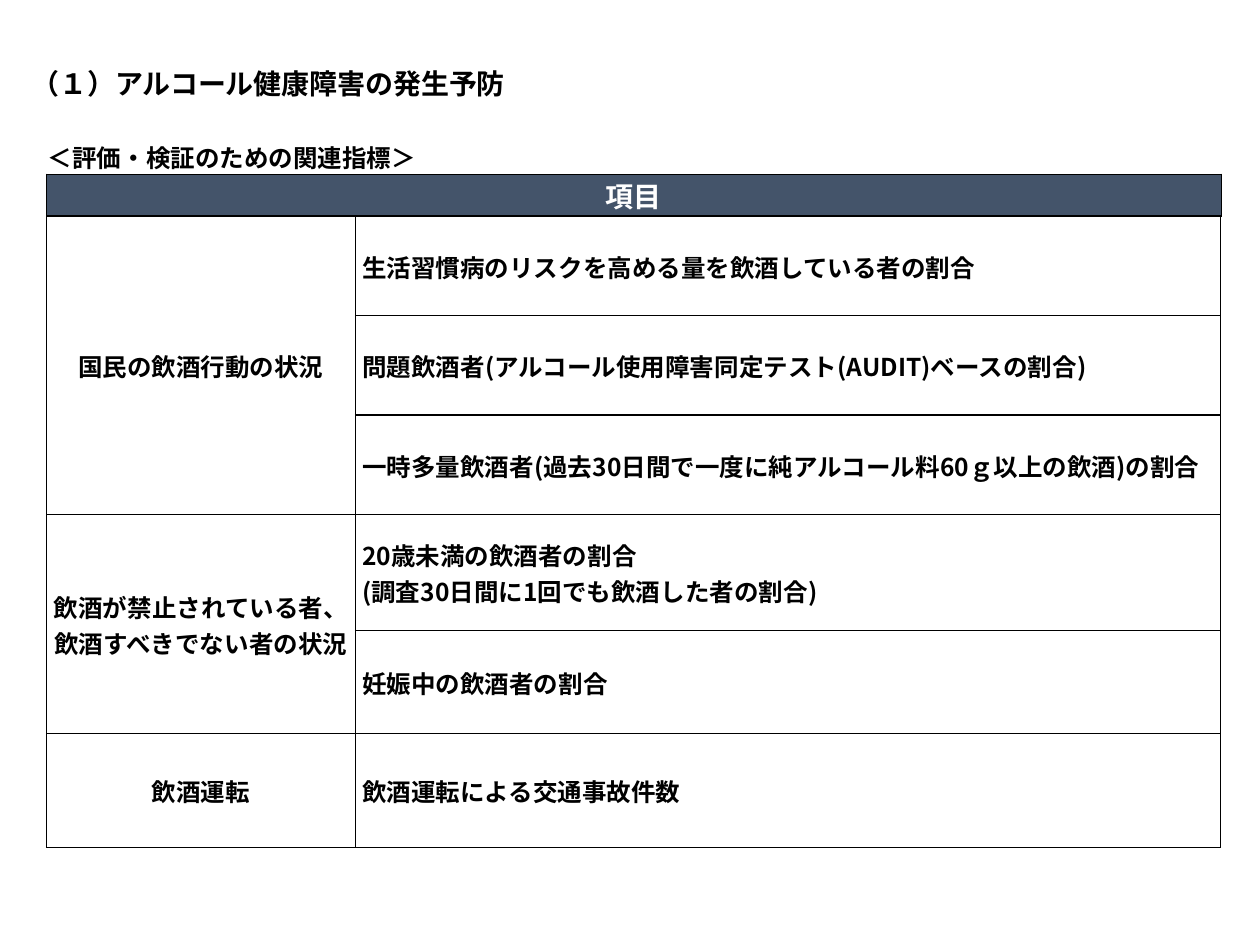
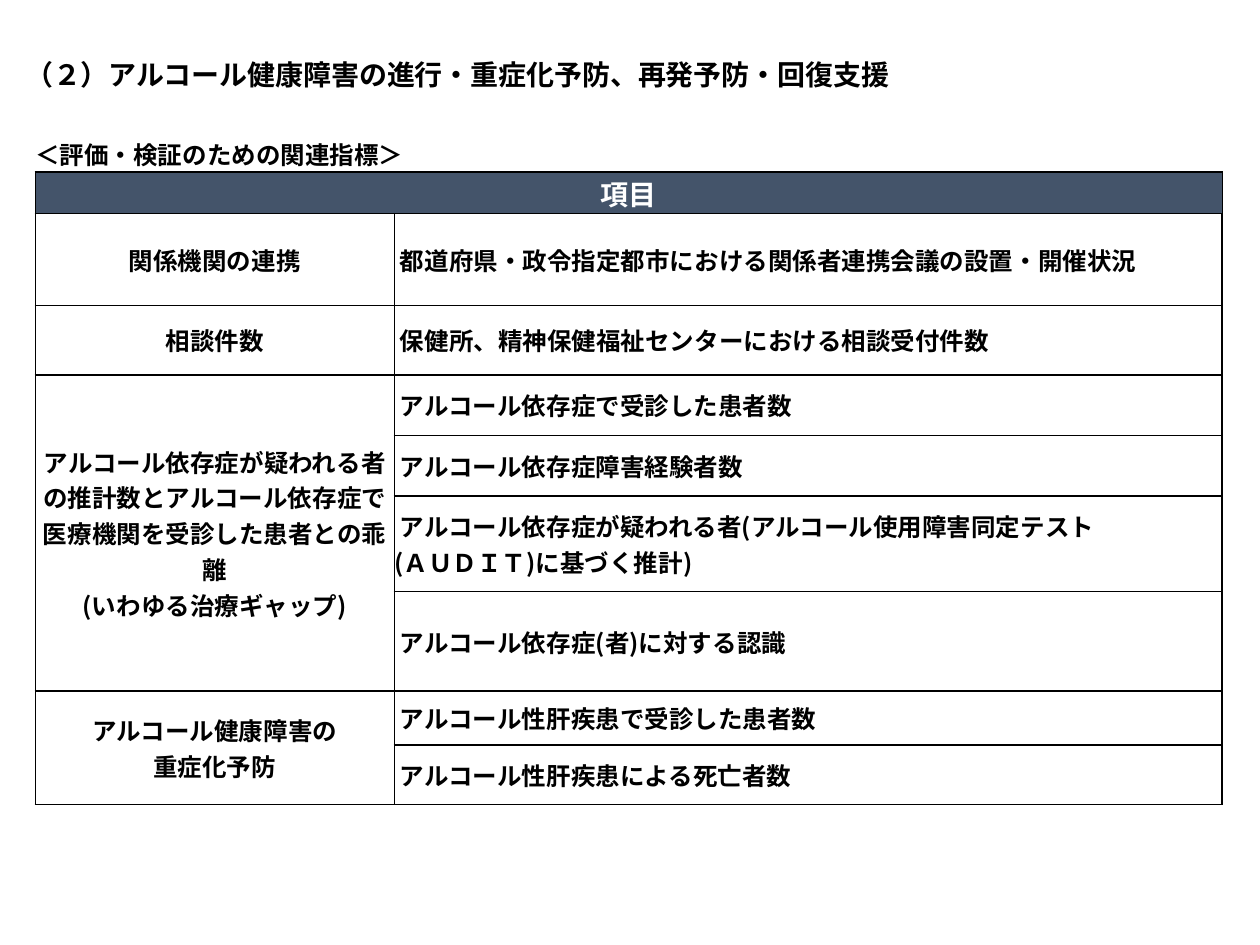
import lxml.etree
import pptx
import pptx.dml.color
import pptx.enum.lang
import pptx.enum.text
import pptx.oxml.ns
import pptx.util
from pptx.util import Inches

FONT = "Noto Sans CJK JP"
BLACK, WHITE, NAVY = "000000", "FFFFFF", "44546A"
LEFT, CENTER = pptx.enum.text.PP_ALIGN.LEFT, pptx.enum.text.PP_ALIGN.CENTER
TOP = pptx.enum.text.MSO_ANCHOR.TOP
MIDDLE = pptx.enum.text.MSO_ANCHOR.MIDDLE
BOTTOM = pptx.enum.text.MSO_ANCHOR.BOTTOM
SIDES = ("L", "R", "T", "B")
CAPTION = "＜評価・検証のための関連指標＞"
HEADER = "項目"
HEAD_HEIGHTS = [0.29, 0.33]

PREVENTION_ROWS = [
    (0.79, 3, ["国民の飲酒行動の状況"], [" 生活習慣病のリスクを高める量を飲酒している者の割合"]),
    (0.79, 0, None, [" 問題飲酒者(アルコール使用障害同定テスト(AUDIT)ベースの割合)"]),
    (0.79, 0, None, [" 一時多量飲酒者(過去30日間で一度に純アルコール料60ｇ以上の飲酒)の割合"]),
    (0.92, 2, ["飲酒が禁止されている者、", "飲酒すべきでない者の状況"],
     [" 20歳未満の飲酒者の割合", " (調査30日間に1回でも飲酒した者の割合)"]),
    (0.82, 0, None, [" 妊娠中の飲酒者の割合"]),
    (0.9, 1, ["飲酒運転"], [" 飲酒運転による交通事故件数"]),
]

RECOVERY_ROWS = [
    (0.73, 1, ["関係機関の連携"], [" 都道府県・政令指定都市における関係者連携会議の設置・開催状況"]),
    (0.55, 1, ["相談件数"], [" 保健所、精神保健福祉センターにおける相談受付件数"]),
    (0.48, 4, ["アルコール依存症が疑われる者の推計数とアルコール依存症で医療機関を受診した患者との乖離",
               "(いわゆる治療ギャップ)"], [" アルコール依存症で受診した患者数"]),
    (0.48, 0, None, [" アルコール依存症障害経験者数"]),
    (0.76, 0, None, [" アルコール依存症が疑われる者(アルコール使用障害同定テスト", "(ＡＵＤＩＴ)に基づく推計)"]),
    (0.79, 0, None, [" アルコール依存症(者)に対する認識"]),
    (0.43, 2, ["アルコール健康障害の", "重症化予防"], [" アルコール性肝疾患で受診した患者数"]),
    (0.47, 0, None, [" アルコール性肝疾患による死亡者数"]),
]


def color(hex_value):
    return pptx.dml.color.RGBColor.from_string(hex_value)


def set_attributes(target, values):
    for name, value in values.items():
        setattr(target, name, value)


class IndicatorDeck:
    """Hold the shared style and the current slide of the indicator tables."""

    def __init__(self):
        self.presentation = pptx.Presentation()
        set_attributes(self.presentation, {"slide_width": Inches(10), "slide_height": Inches(7.5)})
        self.slide = None

    def add_slide(self):
        self.slide = self.presentation.slides.add_slide(self.presentation.slide_layouts[5])

    def put_text(self, text_frame, lines, size, font_color=BLACK, alignment=LEFT):
        text_frame.text = "\n".join(lines)
        for paragraph in text_frame.paragraphs:
            paragraph.alignment = alignment
            font = paragraph.runs[0].font
            set_attributes(font, {
                "name": FONT, "size": pptx.util.Pt(size), "bold": True,
                "language_id": pptx.enum.lang.MSO_LANGUAGE_ID.JAPANESE,
            })
            font.color.rgb = color(font_color)
            east_asian = lxml.etree.SubElement(font._element, pptx.oxml.ns.qn("a:ea"))
            east_asian.set("typeface", FONT)

    def title(self, text, left, top, width):
        shape = self.slide.shapes.title
        set_attributes(shape, {
            "left": Inches(left), "top": Inches(top), "width": Inches(width), "height": Inches(0.4),
        })
        set_attributes(shape.text_frame, {
            "word_wrap": True, "vertical_anchor": TOP,
            "auto_size": pptx.enum.text.MSO_AUTO_SIZE.NONE,
        })
        self.put_text(shape.text_frame, [text], 16)

    def borders(self, cell, widths):
        properties = cell._tc.get_or_add_tcPr()
        for side in SIDES:
            line = lxml.etree.SubElement(properties, pptx.oxml.ns.qn(f"a:ln{side}"))
            if side not in widths:
                lxml.etree.SubElement(line, pptx.oxml.ns.qn("a:noFill"))
                continue
            line.set("w", str(pptx.util.Pt(widths[side])))
            fill = lxml.etree.SubElement(line, pptx.oxml.ns.qn("a:solidFill"))
            lxml.etree.SubElement(fill, pptx.oxml.ns.qn("a:srgbClr")).set("val", BLACK)

    def cell_style(self, cell, row_index, inset, line_width):
        margin = Inches(inset)
        set_attributes(cell, {
            "margin_left": margin, "margin_right": margin, "margin_top": margin, "margin_bottom": 0,
            "vertical_anchor": MIDDLE if row_index else BOTTOM,
        })
        widths = dict.fromkeys(SIDES, line_width)
        if row_index == 0:
            widths = {"B": 1}
        elif row_index == 1:
            widths.update({"T": 1, "R": 0.5})
        self.borders(cell, widths)
        if row_index == 1:
            cell.fill.solid()
            cell.fill.fore_color.rgb = color(NAVY)
        else:
            cell.fill.background()

    def table(self, left, top, column_widths, rows, inset, line_width):
        heights = [*HEAD_HEIGHTS, *(row[0] for row in rows)]
        table = self.slide.shapes.add_table(
            len(heights), len(column_widths), Inches(left), Inches(top),
            Inches(sum(column_widths)), Inches(sum(heights))).table
        set_attributes(table, {"first_row": False, "horz_banding": False})
        for column, width in zip(table.columns, column_widths):
            column.width = Inches(width)
        for row_index, (row, height) in enumerate(zip(table.rows, heights)):
            row.height = Inches(height)
            for cell in row.cells:
                self.cell_style(cell, row_index, inset, line_width)

        last = len(column_widths) - 1
        table.cell(0, 0).merge(table.cell(0, 1))
        table.cell(1, 0).merge(table.cell(1, last))
        self.put_text(table.cell(0, 0).text_frame, [CAPTION], 14)
        self.put_text(table.cell(1, 0).text_frame, [HEADER], 16, WHITE, CENTER)
        for row_index, (_, span, label, item) in enumerate(rows, start=len(HEAD_HEIGHTS)):
            if span > 1:
                table.cell(row_index, 0).merge(table.cell(row_index + span - 1, 0))
            if last > 1:
                table.cell(row_index, 1).merge(table.cell(row_index, last))
            if label:
                self.put_text(table.cell(row_index, 0).text_frame, label, 14, alignment=CENTER)
            self.put_text(table.cell(row_index, 1).text_frame, item, 14)


def main():
    deck = IndicatorDeck()
    deck.add_slide()
    deck.title("（１）アルコール健康障害の発生予防", 0.15, 0.48, 5.3)
    deck.table(0.37, 1.09, [2.45, 6.87], PREVENTION_ROWS, 0.01, 0.75)
    deck.add_slide()
    deck.title("（２）アルコール健康障害の進行・重症化予防、再発予防・回復支援", 0.1, 0.41, 8.07)
    deck.table(0.28, 1.06, [2.85, 1.86, 4.71], RECOVERY_ROWS, 0, 1)
    deck.presentation.save("out.pptx")


if __name__ == "__main__":
    main()
